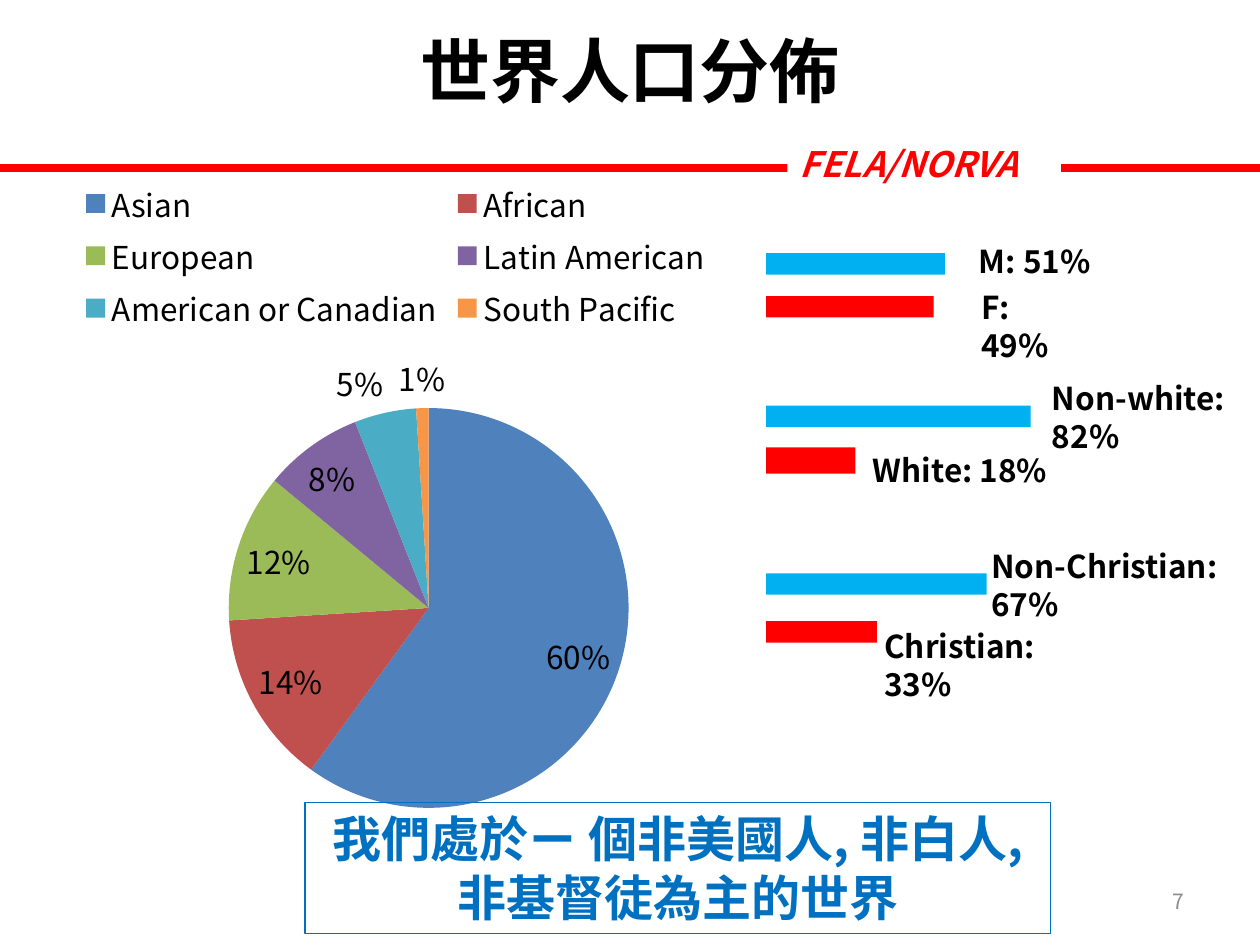
import pptx
import pptx.util
import pptx.chart.data
import pptx.dml.color
import pptx.enum.chart
import pptx.enum.shapes
import pptx.enum.text
import pptx.oxml
import pptx.oxml.ns

Inches = pptx.util.Inches
Align = pptx.enum.text.PP_ALIGN
Anchor = pptx.enum.text.MSO_ANCHOR

FONT = "Noto Sans CJK TC"
BLACK, WHITE, RED = "000000", "FFFFFF", "FF0000"
SKY, BLUE, GRAY = "00B0F0", "0070C0", "8C8C8C"


def color(value):
    return pptx.dml.color.RGBColor.from_string(value)


class PopulationSlide:
    def __init__(self, deck):
        self.page = deck.slides.add_slide(deck.slide_layouts[5])

    def place(self, item, area):
        item.left, item.top, item.width, item.height = map(Inches, area)

    def set_text(self, item, text, size, ink=BLACK, bold=True, italic=False,
                 align=Align.LEFT, anchor=Anchor.TOP):
        frame = item.text_frame
        frame.word_wrap = True
        frame.auto_size = pptx.enum.text.MSO_AUTO_SIZE.NONE
        frame.vertical_anchor = anchor
        para = frame.paragraphs[0]
        para.alignment = align
        para.add_run().text = text
        font = para.font
        font.name, font.size = FONT, pptx.util.Pt(size)
        font.bold, font.italic = bold, italic
        font.color.rgb = color(ink)
        east_asian = pptx.oxml.parse_xml(
            f'<a:ea {pptx.oxml.ns.nsdecls("a")} typeface="{FONT}"/>')
        font._element.find(pptx.oxml.ns.qn("a:latin")).addnext(east_asian)

    def title(self, area, text):
        holder = self.page.shapes.title
        self.place(holder, area)
        self.set_text(holder, text, 40, align=Align.CENTER)

    def text(self, area, text, size=18, **style):
        box = self.page.shapes.add_textbox(*map(Inches, area))
        self.set_text(box, text, size, **style)

    def rectangle(self, area, fill=None, outline=None):
        shape = self.page.shapes.add_shape(
            pptx.enum.shapes.MSO_SHAPE.RECTANGLE, *map(Inches, area))
        shape.shadow.inherit = False
        if fill:
            shape.fill.solid()
            shape.fill.fore_color.rgb = color(fill)
        else:
            shape.fill.background()
        if outline:
            shape.line.color.rgb = color(outline)
            shape.line.width = pptx.util.Pt(0.75)
        else:
            shape.line.fill.background()
        return shape

    def rule(self, start, end, ink, width):
        line = self.page.shapes.add_connector(
            pptx.enum.shapes.MSO_CONNECTOR.STRAIGHT, *map(Inches, start + end))
        line.line.color.rgb = color(ink)
        line.line.width = pptx.util.Pt(width)
        line._element.spPr.append(pptx.oxml.parse_xml(
            f'<a:effectLst {pptx.oxml.ns.nsdecls("a")}/>'))

    def pie(self, area, shares):
        data = pptx.chart.data.CategoryChartData()
        data.categories = [name for name, _, _ in shares]
        data.add_series("Series 1", [value for _, value, _ in shares])
        chart = self.page.shapes.add_chart(
            pptx.enum.chart.XL_CHART_TYPE.PIE, *map(Inches, area), data).chart
        chart.font.name, chart.font.size = FONT, pptx.util.Pt(18)
        chart.font.color.rgb = color(BLACK)
        chart.has_title = False
        chart.has_legend = True
        chart.legend.position = pptx.enum.chart.XL_LEGEND_POSITION.TOP
        chart.legend.include_in_layout = False
        plot = chart.plots[0]
        plot.vary_by_categories = True
        plot.has_data_labels = True
        labels = plot.data_labels
        labels.show_percentage, labels.show_value = True, False
        labels.number_format, labels.number_format_is_linked = "0%", False
        labels.position = pptx.enum.chart.XL_LABEL_POSITION.BEST_FIT
        for index, (_, _, fill) in enumerate(shares):
            wedge = plot.series[0].points[index].format.fill
            wedge.solid()
            wedge.fore_color.rgb = color(fill)


SHARES = [
    ("Asian", 60, "4F81BD"),
    ("African", 14, "C0504D"),
    ("European", 12, "9BBB59"),
    ("Latin American", 8, "8064A2"),
    ("American or Canadian", 5, "4BACC6"),
    ("South Pacific", 1, "F79646"),
]

BAR_LEFT = 6.08
BARS = [
    (2.01, 1.42, 0.17, SKY, "M: 51%", (7.67, 1.87, 1.17, 0.4)),
    (2.35, 1.33, 0.17, RED, "F: 49%", (7.69, 2.24, 0.9, 0.71)),
    (3.22, 2.1, 0.17, SKY, "Non-white: 82%", (8.25, 2.96, 1.58, 0.71)),
    (3.55, 0.71, 0.21, RED, "White: 18%", (6.83, 3.53, 1.65, 0.4)),
    (4.55, 1.75, 0.17, SKY, "Non-Christian: 67%", (7.77, 4.29, 2.07, 0.71)),
    (4.93, 0.88, 0.17, RED, "Christian: 33%", (6.92, 4.93, 1.9, 0.71)),
]


def main():
    deck = pptx.Presentation()
    deck.slide_width, deck.slide_height = Inches(10), Inches(7.5)
    slide = PopulationSlide(deck)

    slide.title((0, 0.17, 10, 0.77), "世界人口分佈")
    slide.rule((0, 1.33), (10, 1.33), RED, 4.5)
    badge = slide.rectangle((6.25, 1.08, 2.17, 0.44), WHITE)
    slide.set_text(badge, "FELA/NORVA", 20, ink=RED, italic=True)

    slide.pie((-0.15, 1.31, 6.58, 5.24), SHARES)
    for top, width, height, fill, label, label_area in BARS:
        slide.rectangle((BAR_LEFT, top, width, height), fill)
        slide.text(label_area, label)

    message = slide.rectangle((2.42, 6.37, 5.92, 1.04), outline=BLUE)
    slide.set_text(message, "我們處於ㄧ 個非美國人, 非白人, 非基督徒為主的世界", 28,
                   ink=BLUE, align=Align.CENTER)
    slide.text((7.17, 6.95, 2.33, 0.4), "7", 12, ink=GRAY, bold=False,
               align=Align.RIGHT, anchor=Anchor.MIDDLE)

    deck.save("out.pptx")


if __name__ == "__main__":
    main()
